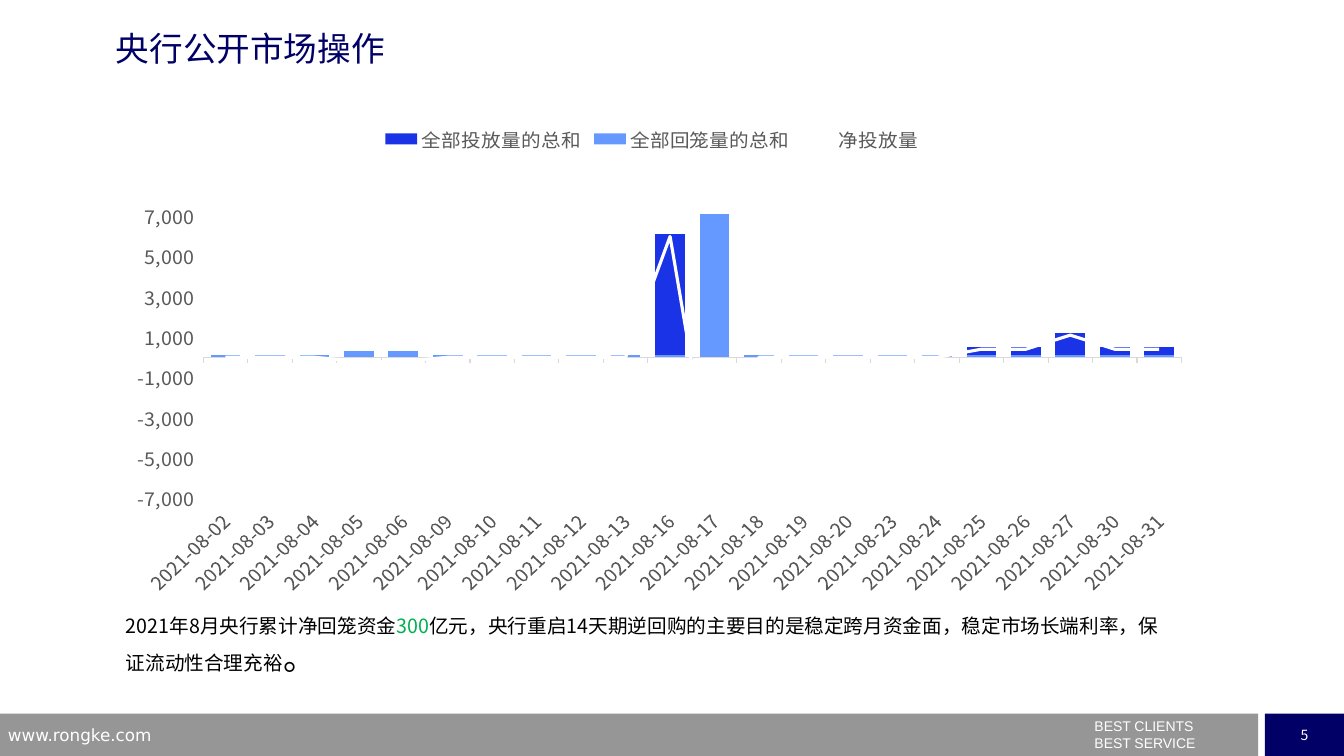
from dataclasses import dataclass

from lxml import etree
from pptx import Presentation
from pptx.chart.data import CategoryChartData
from pptx.dml.color import RGBColor
from pptx.enum.chart import XL_CHART_TYPE, XL_LEGEND_POSITION, XL_TICK_LABEL_POSITION, XL_TICK_MARK
from pptx.enum.shapes import MSO_SHAPE
from pptx.enum.text import MSO_ANCHOR, PP_ALIGN
from pptx.oxml import parse_xml
from pptx.oxml.ns import nsdecls, qn
from pptx.util import Pt

COLUMN = XL_CHART_TYPE.COLUMN_CLUSTERED
LEGEND_TOP = XL_LEGEND_POSITION.TOP
LABELS_LOW = XL_TICK_LABEL_POSITION.LOW
TICK_NONE, TICK_OUT = XL_TICK_MARK.NONE, XL_TICK_MARK.OUTSIDE
RECT = MSO_SHAPE.RECTANGLE
MIDDLE, TOP = MSO_ANCHOR.MIDDLE, MSO_ANCHOR.TOP
CENTER, LEFT = PP_ALIGN.CENTER, PP_ALIGN.LEFT

CJK, ARIAL, DEJAVU = "Noto Sans CJK SC", "Arial", "DejaVu Sans"
COLORS = {
    "navy": "000066", "gray": "969696", "white": "FFFFFF", "black": "000000",
    "green": "00B050", "label": "595959", "axis": "D9D9D9",
    "injected": "1B33E7", "withdrawn": "6699FF",
}

DAYS = [2, 3, 4, 5, 6, 9, 10, 11, 12, 13, 16, 17, 18, 19, 20, 23, 24, 25, 26, 27, 30, 31]
USUAL_AMOUNT = 100
INJECTED = {16: 6100, 25: 500, 26: 500, 27: 1200, 30: 500, 31: 500}
WITHDRAWN = {5: 300, 6: 300, 17: 7100}


@dataclass
class Box:
    left: float
    top: float
    width: float
    height: float


@dataclass
class Run:
    text: str
    size: float
    color: str
    font: str = CJK


@dataclass
class Bar:
    box: Box
    color: str


@dataclass
class TextBlock:
    box: Box
    paragraphs: list[list[Run]]
    inset: bool = True
    line_spacing: float = 1.0
    gap: float = 0


BARS = [
    Bar(Box(0, 509.8, 898.6, 30.2), "gray"),
    Bar(Box(903.6, 509.8, 56.4, 30.2), "navy"),
]
PAGE_NUMBER = Run("5", 10, "white")
TEXTS = [
    TextBlock(Box(774.7, 514, 144, 26),
              [[Run(words, 10, "white", ARIAL)] for words in ("BEST CLIENTS", "BEST SERVICE")],
              line_spacing=0.5, gap=6),
    TextBlock(Box(-1.4, 514, 232, 19), [[Run("www.rongke.com", 12, "white", DEJAVU)]]),
    TextBlock(Box(82.8, 20.2, 648, 41), [[Run("央行公开市场操作", 24, "navy")]], inset=False),
    TextBlock(Box(82.8, 434.9, 761, 53.3), [[
        Run("2021年8月央行累计净回笼资金", 14, "black"),
        Run("300", 14, "green"),
        Run("亿元，央行重启14天期逆回购的主要目的是稳定跨月资金面，"
            "稳定市场长端利率，保证流动性合理充裕", 14, "black"),
        Run("。", 24, "black", ARIAL),
    ]]),
]
CHART_BOX = Box(54.7, 82.1, 822.2, 342.7)
PLOT_LAYOUT = {"x": 0.11, "y": 0.18, "w": 0.85, "h": 0.67}


def rgb(name: str) -> RGBColor:
    return RGBColor.from_string(COLORS[name])


def place(box: Box) -> list:
    return [Pt(v) for v in (box.left, box.top, box.width, box.height)]


def style_font(font, size: float, color: str, name: str = CJK) -> None:
    font.size = Pt(size)
    font.name = name
    font.color.rgb = rgb(color)


def add_run(p, run: Run) -> None:
    r = p.add_run()
    r.text = run.text
    style_font(r.font, run.size, run.color, run.font)
    if run.font == CJK:
        r.font._element.find(qn("a:latin")).addnext(
            parse_xml(f'<a:ea {nsdecls("a")} typeface="{CJK}"/>'))


def add_bar(slide, bar: Bar):
    s = slide.shapes.add_shape(RECT, *place(bar.box))
    s.shadow.inherit = False
    s.fill.solid()
    s.fill.fore_color.rgb = rgb(bar.color)
    s.line.fill.background()
    return s


def add_text(slide, block: TextBlock) -> None:
    tf = slide.shapes.add_textbox(*place(block.box)).text_frame
    tf.word_wrap = True
    tf.vertical_anchor = TOP
    if not block.inset:
        tf.margin_left = tf.margin_top = tf.margin_right = tf.margin_bottom = 0
    for i, runs in enumerate(block.paragraphs):
        p = tf.add_paragraph() if i else tf.paragraphs[0]
        p.alignment = LEFT
        p.line_spacing = block.line_spacing
        if i:
            p.space_before = Pt(block.gap)
        for run in runs:
            add_run(p, run)


def move_last_series_to_line(chart) -> None:
    bar_chart = chart.plots[0]._element
    ser = bar_chart.findall(qn("c:ser"))[-1]
    for flag in ser.findall(qn("c:invertIfNegative")):
        ser.remove(flag)
    line_chart = parse_xml(
        f'<c:lineChart {nsdecls("c")}><c:grouping val="standard"/>'
        '<c:varyColors val="0"/><c:marker val="1"/></c:lineChart>')
    line_chart.insert(2, ser)
    for axis in bar_chart.findall(qn("c:axId")):
        etree.SubElement(line_chart, qn("c:axId")).set("val", axis.get("val"))
    bar_chart.addnext(line_chart)
    ser.find(qn("c:tx")).addnext(
        parse_xml(f'<c:marker {nsdecls("c")}><c:symbol val="none"/></c:marker>'))


def set_plot_layout(chart) -> None:
    plot_area = chart._chartSpace.chart.plotArea
    for old in plot_area.findall(qn("c:layout")):
        plot_area.remove(old)
    modes = "".join(f'<c:{k}Mode val="edge"/>' for k in "xy")
    sizes = "".join(f'<c:{k} val="{v}"/>' for k, v in PLOT_LAYOUT.items())
    plot_area.insert(0, parse_xml(
        f'<c:layout {nsdecls("c")}><c:manualLayout><c:layoutTarget val="inner"/>'
        f'{modes}{sizes}</c:manualLayout></c:layout>'))


def add_operations_chart(slide) -> None:
    injected = [INJECTED.get(d, USUAL_AMOUNT) for d in DAYS]
    withdrawn = [WITHDRAWN.get(d, USUAL_AMOUNT) for d in DAYS]
    data = CategoryChartData()
    data.categories = [f"2021-08-{d:02}" for d in DAYS]
    data.add_series("全部投放量的总和", injected)
    data.add_series("全部回笼量的总和", withdrawn)
    data.add_series("净投放量", [a - b for a, b in zip(injected, withdrawn)])
    chart = slide.shapes.add_chart(COLUMN, *place(CHART_BOX), data).chart
    style_font(chart.font, 10, "black")
    chart.has_title = False
    chart.has_legend = True
    chart.legend.position = LEGEND_TOP
    chart.legend.include_in_layout = False
    style_font(chart.legend.font, 14, "label")

    move_last_series_to_line(chart)
    columns, net = chart.plots
    columns.vary_by_categories = False
    columns.gap_width, columns.overlap = 50, 100
    for series, color in zip(columns.series, ("injected", "withdrawn")):
        series.format.fill.solid()
        series.format.fill.fore_color.rgb = rgb(color)
    net_line = net.series[0]
    net_line.smooth = False
    net_line.format.line.color.rgb = rgb("white")
    net_line.format.line.width = Pt(2.25)

    dates, amounts = chart.category_axis, chart.value_axis
    for axis, tick in ((dates, TICK_OUT), (amounts, TICK_NONE)):
        axis.has_major_gridlines = False
        axis.major_tick_mark, axis.minor_tick_mark = tick, TICK_NONE
        style_font(axis.tick_labels.font, 14, "label")
    dates.tick_label_position = LABELS_LOW
    dates.format.line.color.rgb = rgb("axis")
    dates.format.line.width = Pt(0.75)
    amounts.minimum_scale, amounts.maximum_scale, amounts.major_unit = -7000, 8000, 2000
    amounts.tick_labels.number_format = "#,##0_ "
    amounts.tick_labels.number_format_is_linked = False
    amounts.format.line.fill.background()
    set_plot_layout(chart)


def main() -> None:
    prs = Presentation()
    prs.slide_width, prs.slide_height = Pt(960), Pt(540)
    slide = prs.slides.add_slide(prs.slide_layouts[6])
    page_bar = [add_bar(slide, bar) for bar in BARS][-1]
    tf = page_bar.text_frame
    tf.vertical_anchor = MIDDLE
    tf.word_wrap = False
    p = tf.paragraphs[0]
    p.alignment = CENTER
    add_run(p, PAGE_NUMBER)
    for block in TEXTS:
        add_text(slide, block)
    add_operations_chart(slide)
    prs.save("out.pptx")


if __name__ == "__main__":
    main()
